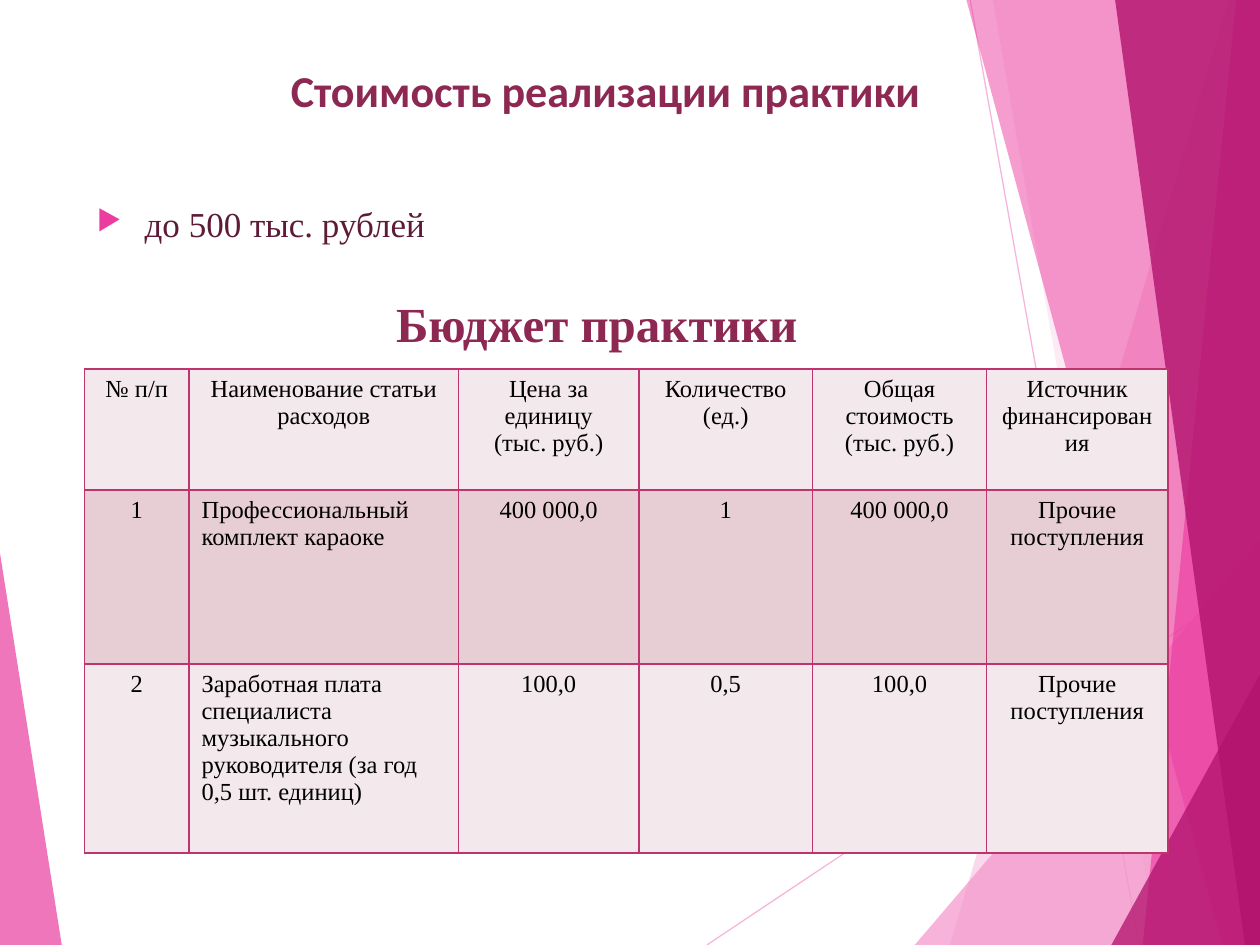
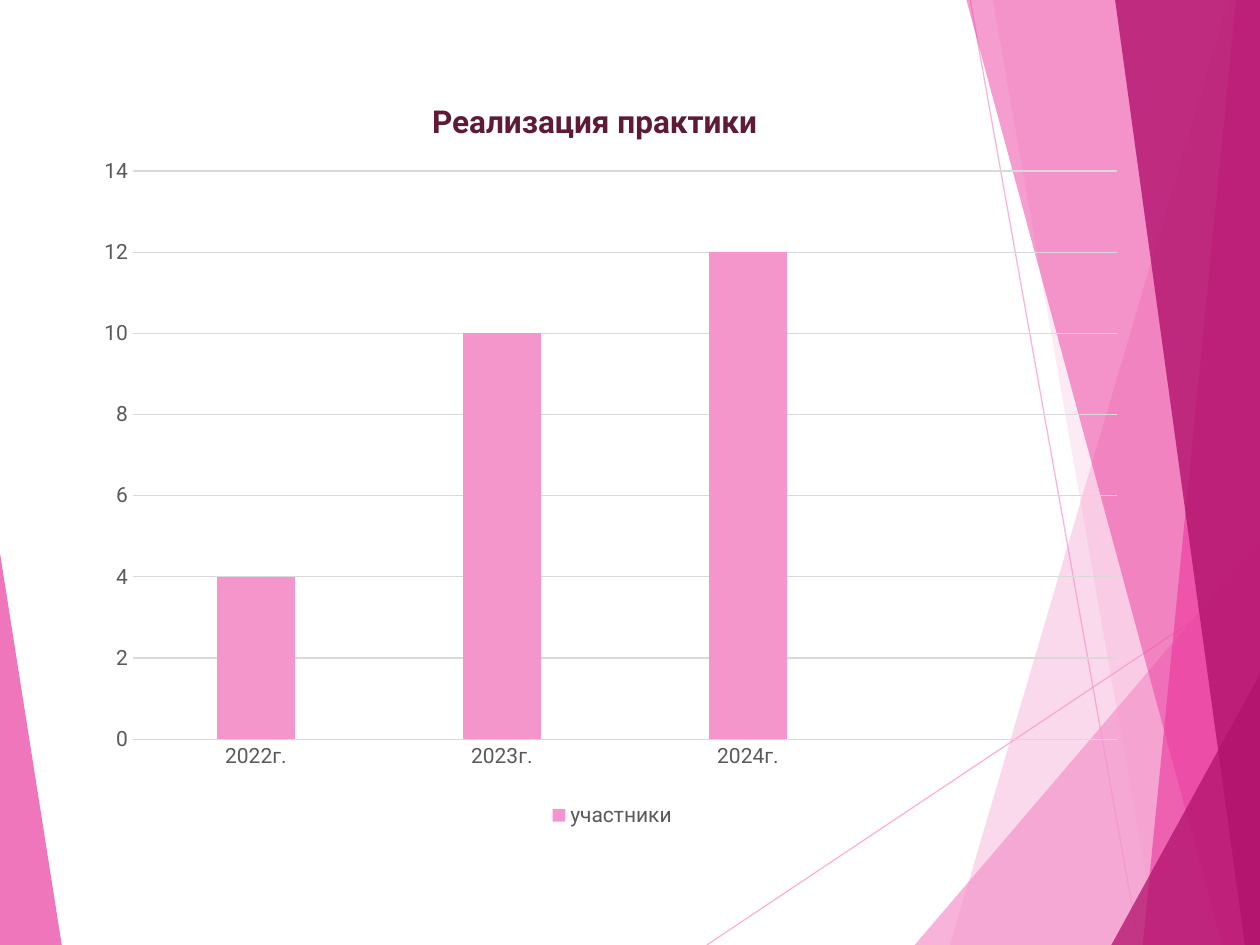
from lxml import etree
from pptx import Presentation
from pptx import util as u
from pptx.chart import data as chart_data
from pptx.dml.color import RGBColor
from pptx.enum import chart as chart_enum
from pptx.enum import shapes, text
from pptx.oxml import ns, parse_xml

WHITE = RGBColor(0xFF, 0xFF, 0xFF)
BLACK = RGBColor(0x00, 0x00, 0x00)
LIGHT_PINK = RGBColor(0xF4, 0x96, 0xCB)
PINK = RGBColor(0xEB, 0x3D, 0x9F)
MAGENTA = RGBColor(0xB2, 0x13, 0x6D)
TITLE_PLUM = RGBColor(0x8D, 0x28, 0x53)
DARK_PLUM = RGBColor(0x5E, 0x1B, 0x38)
BORDER = RGBColor(0xBC, 0x35, 0x6F)
ROW_LIGHT = RGBColor(0xF3, 0xE8, 0xEB)
ROW_DARK = RGBColor(0xE7, 0xCE, 0xD5)
GRID_GRAY = RGBColor(0xD9, 0xD9, 0xD9)
LABEL_GRAY = RGBColor(0x59, 0x59, 0x59)

SERIF, SANS, HEADING = "Times New Roman", "Roboto", "Calibri"
CENTER, LEFT, JUSTIFY = (text.PP_ALIGN.CENTER, text.PP_ALIGN.LEFT,
                         text.PP_ALIGN.JUSTIFY)
WIDTH, HEIGHT = 10, 7.5

# Start, end
RAYS = [((5.61, 7.5), (10, 4.57)), ((7.7, 0), (9.04, 7.5))]
# Colour, opacity in percent, corners
FACETS = [
    (LIGHT_PINK, 36, [(9.75, 0), (7.54, 7.5), (10, 7.5), (10, 0)]),
    (LIGHT_PINK, 20, [(7.88, 0), (9.19, 7.5), (10, 7.5), (10, 0)]),
    (LIGHT_PINK, 72, [(7.26, 7.5), (10, 4.29), (10, 7.5)]),
    (PINK, 50, [(7.67, 0), (9.7, 7.5), (10, 7.5), (10, 0)]),
    (PINK, 66, [(9.81, 0), (9.07, 7.5), (10, 7.5), (10, 0)]),
    (MAGENTA, 80, [(8.85, 0), (9.88, 7.5), (10, 7.5), (10, 0)]),
    (MAGENTA, 76, [(8.82, 7.5), (10, 5.35), (10, 7.5)]),
    (PINK, 70, [(0, 4.39), (0.49, 7.5), (0, 7.5)]),
]

COLUMN_WIDTHS = [0.83, 2.14, 1.43, 1.38, 1.38, 1.44]
ROW_HEIGHTS = [0.96, 1.38, 1.5]
BUDGET = [
    ["№ п/п", "Наименование статьи расходов", "Цена за единицу\n(тыс. руб.)",
     "Количество\n(ед.)", "Общая стоимость\n(тыс. руб.)",
     "Источник финансирования"],
    ["1", "Профессиональный комплект караоке", "400 000,0", "1", "400 000,0",
     "Прочие поступления"],
    ["2", "Заработная плата специалиста музыкального руководителя "
     "(за год 0,5 шт. единиц)", "100,0", "0,5", "100,0", "Прочие поступления"],
]


def inches(*lengths):
    return [u.Inches(length) for length in lengths]


def set_opacity(shape, percent):
    for color in shape._element.iter(ns.qn("a:srgbClr")):
        etree.SubElement(color, ns.qn("a:alpha"), val=str(percent * 1000))


def set_font(font, name, size, color, bold=False):
    font.name, font.size, font.bold = name, u.Pt(size), bold
    font.color.rgb = color


def write_text(frame, content, *, name, size, color, bold=False,
               align=LEFT, line_spacing=None):
    """Write one paragraph for each line of content."""
    frame.word_wrap = True
    for index, line in enumerate(content.split("\n")):
        paragraph = frame.add_paragraph() if index else frame.paragraphs[0]
        paragraph.alignment = align
        paragraph.line_spacing = line_spacing
        run = paragraph.add_run()
        run.text = line
        set_font(run.font, name, size, color, bold)


def add_text(slide, box, content, anchor=text.MSO_ANCHOR.TOP, **style):
    frame = slide.shapes.add_textbox(*inches(*box)).text_frame
    frame.vertical_anchor = anchor
    write_text(frame, content, **style)
    return frame


def add_bullet(paragraph, indent):
    properties = paragraph._p.get_or_add_pPr()
    properties.set("marL", str(u.Inches(indent)))
    properties.set("indent", str(-u.Inches(indent)))
    color = etree.SubElement(properties, ns.qn("a:buClr"))
    etree.SubElement(color, ns.qn("a:srgbClr"), val=str(PINK))
    etree.SubElement(properties, ns.qn("a:buSzPct"), val="80000")
    etree.SubElement(properties, ns.qn("a:buChar"), char="▶")


def draw_facets(slide):
    """Draw the translucent rays and facets along the slide's edges."""
    for start, end in RAYS:
        ray = slide.shapes.add_connector(shapes.MSO_CONNECTOR.STRAIGHT,
                                         *inches(*start, *end))
        ray.line.color.rgb = LIGHT_PINK
        ray.line.width = u.Pt(0.75)
        etree.SubElement(ray._element.spPr, ns.qn("a:effectLst"))
        set_opacity(ray, 70)
    for color, opacity, corners in FACETS:
        points = [inches(*corner) for corner in corners]
        builder = slide.shapes.build_freeform(*points[0])
        builder.add_line_segments(points[1:], close=True)
        facet = builder.convert_to_shape()
        facet.shadow.inherit = False
        facet.fill.solid()
        facet.fill.fore_color.rgb = color
        facet.line.fill.background()
        set_opacity(facet, opacity)


def add_slide(presentation):
    slide = presentation.slides.add_slide(presentation.slide_layouts[6])
    slide.background.fill.solid()
    slide.background.fill.fore_color.rgb = WHITE
    draw_facets(slide)
    return slide


def set_borders(cell):
    properties = cell._tc.get_or_add_tcPr()
    for index, side in enumerate(("lnL", "lnR", "lnT", "lnB")):
        properties.insert(index, parse_xml(
            f'<a:{side} {ns.nsdecls("a")} w="{u.Pt(1)}"><a:solidFill>'
            f'<a:srgbClr val="{BORDER}"/></a:solidFill></a:{side}>'))


def add_budget_table(slide, left, top):
    table = slide.shapes.add_table(
        len(BUDGET), len(COLUMN_WIDTHS),
        *inches(left, top, sum(COLUMN_WIDTHS), sum(ROW_HEIGHTS))).table
    table.first_row = table.horz_banding = False
    for column, width in zip(table.columns, COLUMN_WIDTHS):
        column.width = u.Inches(width)
    for row_index, (row, height) in enumerate(zip(table.rows, ROW_HEIGHTS)):
        row.height = u.Inches(height)
        for column_index, cell in enumerate(row.cells):
            is_item_name = row_index > 0 and column_index == 1
            write_text(cell.text_frame, BUDGET[row_index][column_index],
                       name=SERIF, size=14, color=BLACK,
                       align=LEFT if is_item_name else CENTER)
            cell.fill.solid()
            cell.fill.fore_color.rgb = ROW_DARK if row_index % 2 else ROW_LIGHT
            set_borders(cell)


def set_plot_layout(chart, x, y, width, height):
    """Fix the inner plot area, in fractions of the chart."""
    plot_area = chart._chartSpace.chart.plotArea
    for layout in plot_area.findall(ns.qn("c:layout")):
        plot_area.remove(layout)
    layout = etree.Element(ns.qn("c:layout"))
    manual = etree.SubElement(layout, ns.qn("c:manualLayout"))
    settings = {"layoutTarget": "inner", "xMode": "edge", "yMode": "edge",
                "x": x, "y": y, "w": width, "h": height}
    for tag, value in settings.items():
        etree.SubElement(manual, ns.qn(f"c:{tag}"), val=str(value))
    plot_area.insert(0, layout)


def add_participants_chart(slide, box):
    data = chart_data.CategoryChartData()
    data.categories = ["2022г.", "2023г.", "2024г.", ""]
    data.add_series("участники", (4, 10, 12, None))
    chart = slide.shapes.add_chart(chart_enum.XL_CHART_TYPE.COLUMN_CLUSTERED,
                                   *inches(*box), data).chart
    set_font(chart.font, SANS, 10, BLACK)
    chart.has_title = False
    set_plot_layout(chart, 0.046, 0.031, 0.932, 0.832)

    plot = chart.plots[0]
    plot.vary_by_categories = False
    plot.gap_width, plot.overlap = 219, -27
    bars = plot.series[0].format.fill
    bars.solid()
    bars.fore_color.rgb = LIGHT_PINK

    values = chart.value_axis
    values.minimum_scale, values.maximum_scale, values.major_unit = 0, 14, 2
    values.has_major_gridlines = True
    values.format.line.fill.background()
    for axis in (chart.category_axis, values):
        axis.major_tick_mark = chart_enum.XL_TICK_MARK.NONE
        set_font(axis.tick_labels.font, SANS, 12, LABEL_GRAY)
    for line in (chart.category_axis.format.line,
                 values.major_gridlines.format.line):
        line.color.rgb = GRID_GRAY
        line.width = u.Pt(0.75)

    chart.has_legend = True
    chart.legend.position = chart_enum.XL_LEGEND_POSITION.BOTTOM
    chart.legend.include_in_layout = False
    set_font(chart.legend.font, SANS, 12, LABEL_GRAY)


def build_budget_slide(presentation):
    slide = add_slide(presentation)
    heading = dict(color=TITLE_PLUM, bold=True, line_spacing=0.7)
    add_text(slide, (2.21, 0.57, 5.5, 0.66), "Стоимость реализации практики",
             name=HEADING, size=25.2, **heading)
    cost = add_text(slide, (0.67, 1.56, 8.41, 0.5), "до 500 тыс. рублей",
                    name=SERIF, size=20, color=DARK_PLUM, align=JUSTIFY)
    add_bullet(cost.paragraphs[0], 0.38)
    add_text(slide, (2.32, 2.41, 4.83, 0.44), "Бюджет практики",
             name=SERIF, size=28, align=CENTER, **heading)
    add_budget_table(slide, 0.67, 2.93)


def build_participants_slide(presentation):
    slide = add_slide(presentation)
    add_text(slide, (1.78, 0.73, 5.88, 0.46), "Реализация практики",
             anchor=text.MSO_ANCHOR.MIDDLE, name=SANS, size=18,
             color=DARK_PLUM, bold=True, align=CENTER)
    add_participants_chart(slide, (0.67, 1.19, 8.38, 5.42))


def main():
    presentation = Presentation()
    presentation.slide_width, presentation.slide_height = inches(WIDTH, HEIGHT)
    build_budget_slide(presentation)
    build_participants_slide(presentation)
    presentation.save("out.pptx")


if __name__ == "__main__":
    main()
